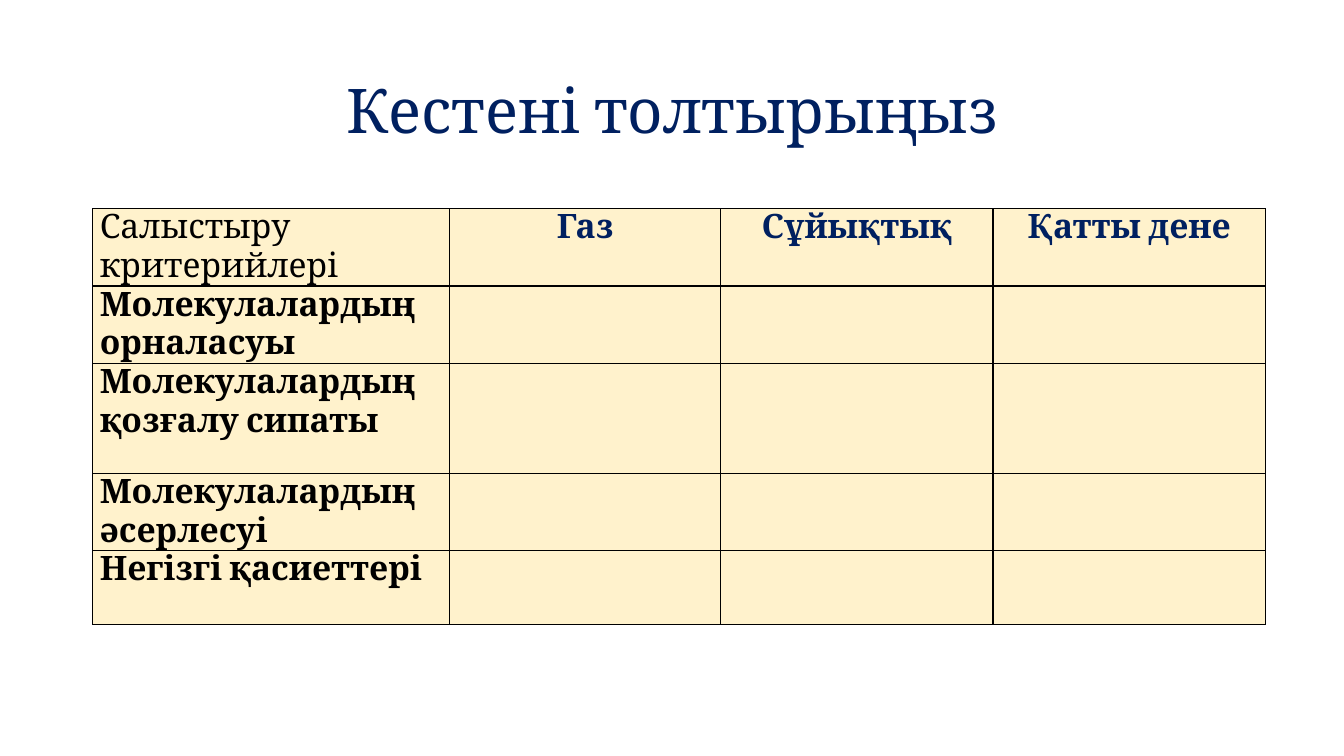
from dataclasses import dataclass

from lxml.etree import SubElement
from pptx import Presentation
from pptx.dml.color import RGBColor
from pptx.enum.text import MSO_ANCHOR as Anchor, PP_ALIGN as Align
from pptx.oxml.ns import qn
from pptx.util import Inches, Pt


@dataclass(frozen=True)
class Theme:
    font: str = "Cambria"
    navy: str = "002060"
    black: str = "000000"
    cream: str = "FFF2CC"
    title_size: int = 44
    table_size: int = 24
    border_width: int = 1


@dataclass(frozen=True)
class Row:
    height: float
    label: str
    bold: bool = True
    headings: tuple[str, ...] = ("", "", "")


THEME = Theme()
COLUMN_WIDTHS = (3.54, 2.69, 2.7, 2.7)
ROWS = (
    Row(0.73, "Салыстыру критерийлері", False, ("Газ", "Сұйықтық", "Қатты дене")),
    Row(0.73, "Молекулалардың орналасуы"),
    Row(1.09, "Молекулалардың қозғалу сипаты"),
    Row(0.73, "Молекулалардың әсерлесуі"),
    Row(0.73, "Негізгі қасиеттері"),
)


def write_text(frame, text: str, *, size: int, color: str, bold: bool = False,
               align: Align = Align.LEFT, line_spacing: float = 1.0) -> None:
    """Write one formatted paragraph into a text frame."""
    frame.word_wrap = True
    paragraph = frame.paragraphs[0]
    paragraph.alignment = align
    paragraph.line_spacing = line_spacing
    run = paragraph.add_run()
    run.text = text
    run.font.name = THEME.font
    run.font.size = Pt(size)
    run.font.bold = bold
    run.font.color.rgb = RGBColor.from_string(color)


def style_cell(cell) -> None:
    """Give a cell its borders, fill and margins."""
    properties = cell._tc.get_or_add_tcPr()
    for side in ("L", "R", "T", "B"):
        line = SubElement(properties, qn(f"a:ln{side}"), w=str(Pt(THEME.border_width)))
        fill = SubElement(line, qn("a:solidFill"))
        SubElement(fill, qn("a:srgbClr"), val=THEME.black)
    cell.fill.solid()
    cell.fill.fore_color.rgb = RGBColor.from_string(THEME.cream)
    cell.margin_left = cell.margin_right = Inches(0.07)
    cell.margin_top = cell.margin_bottom = Inches(0)


def add_title(slide, text: str) -> None:
    """Add the centred slide title."""
    title = slide.shapes.add_textbox(Inches(0.92), Inches(0.4), Inches(11.5), Inches(1.45))
    title.text_frame.vertical_anchor = Anchor.MIDDLE
    write_text(title.text_frame, text, size=THEME.title_size, color=THEME.navy,
               align=Align.CENTER, line_spacing=0.9)


def add_comparison_table(slide) -> None:
    """Add the table that compares the states of matter."""
    table = slide.shapes.add_table(
        len(ROWS), len(COLUMN_WIDTHS), Inches(0.92), Inches(2.07),
        Inches(sum(COLUMN_WIDTHS)), Inches(sum(row.height for row in ROWS))).table
    table.first_row = table.horz_banding = False
    for column, width in zip(table.columns, COLUMN_WIDTHS):
        column.width = Inches(width)
    for table_row, row in zip(table.rows, ROWS):
        table_row.height = Inches(row.height)
        for cell in table_row.cells:
            style_cell(cell)
        label_cell, *state_cells = table_row.cells
        write_text(label_cell.text_frame, row.label, size=THEME.table_size,
                   color=THEME.black, bold=row.bold)
        for cell, heading in zip(state_cells, row.headings):
            if heading:
                write_text(cell.text_frame, heading, size=THEME.table_size,
                           color=THEME.navy, bold=True, align=Align.CENTER)


def main() -> None:
    """Build and save the slide."""
    presentation = Presentation()
    presentation.slide_width = Inches(13.33)
    presentation.slide_height = Inches(7.5)
    slide = presentation.slides.add_slide(presentation.slide_layouts[6])
    add_comparison_table(slide)
    add_title(slide, "Кестені толтырыңыз")
    presentation.save("out.pptx")


if __name__ == "__main__":
    main()
